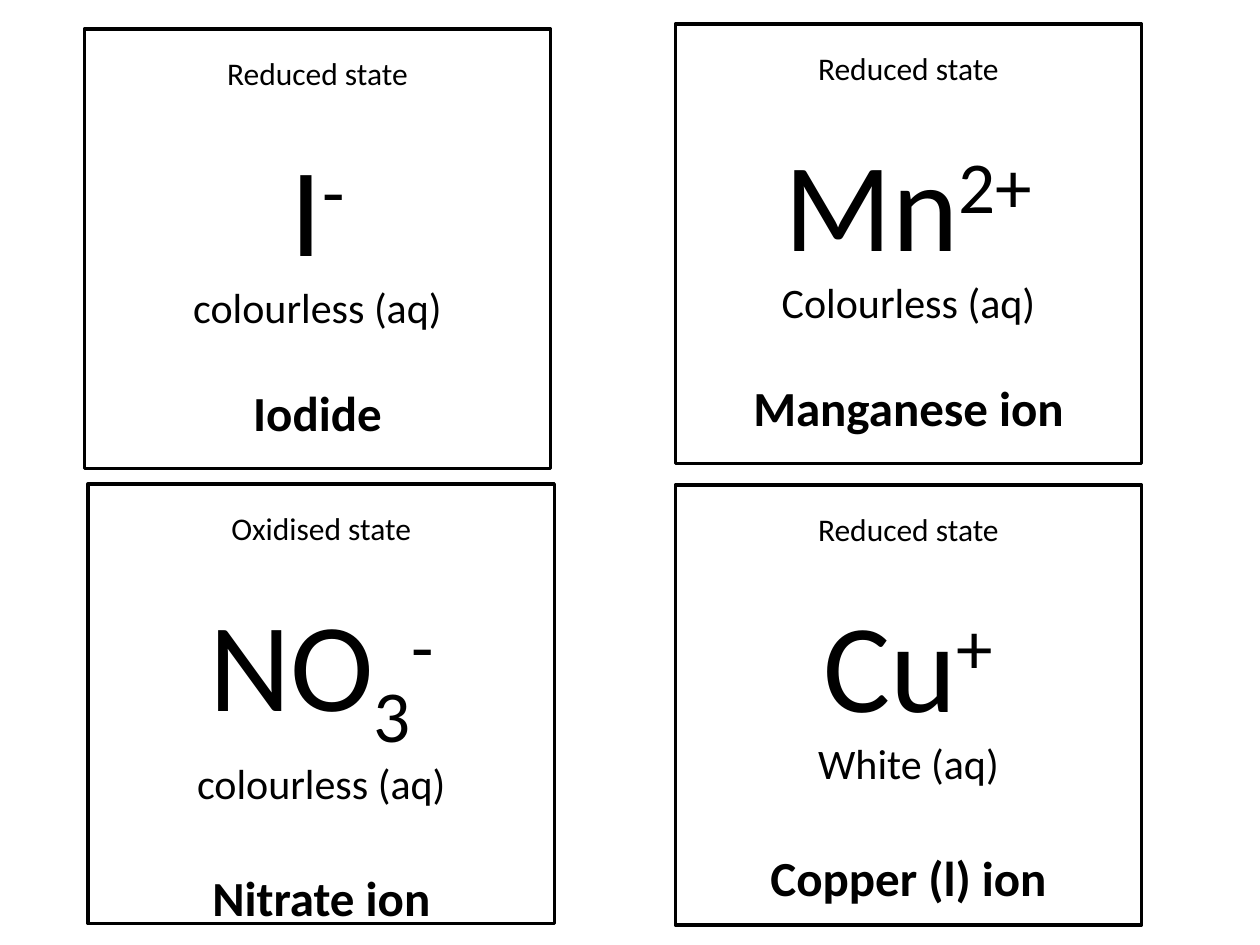
from dataclasses import dataclass

from pptx import Presentation
from pptx.dml.color import RGBColor
from pptx.enum.shapes import MSO_SHAPE
from pptx.enum.text import MSO_AUTO_SIZE, PP_ALIGN
from pptx.util import Inches, Pt


@dataclass(frozen=True)
class Theme:
    font: str = "Calibri"
    ink: RGBColor = RGBColor(0, 0, 0)
    paper: RGBColor = RGBColor(255, 255, 255)
    state_size: int = 18
    formula_size: int = 72
    colour_size: int = 24
    name_size: int = 28
    border: int = 2
    superscript: int = 30
    subscript: int = -25


@dataclass(frozen=True)
class Ion:
    column: int
    row: int
    state: str
    formula: tuple  # (text, baseline shift in percent) pairs
    colour: str
    name: str
    nudge: tuple = (0, 0)
    filled: bool = False


THEME = Theme()
SLIDE_WIDTH, SLIDE_HEIGHT = 10, 7.5
GRID_LEFT, GRID_TOP = 0.67, 0.19
COLUMN_STEP, ROW_STEP = 4.69, 3.66
CARD_WIDTH, CARD_HEIGHT = 3.7, 3.49
TEXT_OVERHANG, TEXT_DROP = 0.16, 0.15
TEXT_HEIGHTS = (3.2, 3.33)  # by row
STATE_GAP = 22
NAME_GAPS = (29, 34)  # points, by row

UP, DOWN = THEME.superscript, THEME.subscript
IONS = (
    Ion(1, 0, "Reduced state", (("Mn", 0), ("2+", UP)),
        "Colourless (aq)", "Manganese ion"),
    Ion(1, 1, "Reduced state", (("Cu", 0), ("+", UP)),
        "White (aq)", "Copper (l) ion"),
    Ion(0, 0, "Reduced state", (("I", 0), ("-", UP)),
        "colourless (aq)", "Iodide", nudge=(0, 0.04), filled=True),
    Ion(0, 1, "Oxidised state", (("NO", 0), ("3", DOWN), ("-", UP)),
        "colourless (aq)", "Nitrate ion", nudge=(0.03, -0.01)),
)


def card_corner(ion):
    left = GRID_LEFT + ion.column * COLUMN_STEP + ion.nudge[0]
    top = GRID_TOP + ion.row * ROW_STEP + ion.nudge[1]
    return left, top


def add_text(para, text, size, bold=False, baseline=0):
    span = para.add_run()
    span.text = text
    span.font.name = THEME.font
    span.font.size = Pt(size)
    span.font.bold = bold
    span.font.color.rgb = THEME.ink
    if baseline:
        span._r.get_or_add_rPr().set("baseline", str(baseline * 1000))


def add_centred_para(frame, first=False, gap=0):
    para = frame.paragraphs[0] if first else frame.add_paragraph()
    para.alignment = PP_ALIGN.CENTER
    para.space_before = Pt(gap)
    return para


def add_card(slide, ion):
    left, top = card_corner(ion)
    card = slide.shapes.add_shape(
        MSO_SHAPE.RECTANGLE, Inches(left), Inches(top),
        Inches(CARD_WIDTH), Inches(CARD_HEIGHT))
    card.shadow.inherit = False
    card.line.color.rgb = THEME.ink
    card.line.width = Pt(THEME.border)
    if ion.filled:
        card.fill.solid()
        card.fill.fore_color.rgb = THEME.paper
    else:
        card.fill.background()


def add_ion_text(slide, ion):
    left, top = card_corner(ion)
    box = slide.shapes.add_textbox(
        Inches(left - TEXT_OVERHANG), Inches(top + TEXT_DROP),
        Inches(CARD_WIDTH + 2 * TEXT_OVERHANG), Inches(TEXT_HEIGHTS[ion.row]))
    frame = box.text_frame
    frame.word_wrap = True
    frame.auto_size = MSO_AUTO_SIZE.SHAPE_TO_FIT_TEXT

    add_text(add_centred_para(frame, first=True), ion.state, THEME.state_size)
    formula = add_centred_para(frame, gap=STATE_GAP)
    for text, baseline in ion.formula:
        add_text(formula, text, THEME.formula_size, baseline=baseline)
    add_text(add_centred_para(frame), ion.colour, THEME.colour_size)
    add_text(add_centred_para(frame, gap=NAME_GAPS[ion.row]),
             ion.name, THEME.name_size, bold=True)


def main():
    deck = Presentation()
    deck.slide_width = Inches(SLIDE_WIDTH)
    deck.slide_height = Inches(SLIDE_HEIGHT)
    slide = deck.slides.add_slide(deck.slide_layouts[6])
    for ion in IONS:
        add_card(slide, ion)
        add_ion_text(slide, ion)
    deck.save("out.pptx")


if __name__ == "__main__":
    main()
